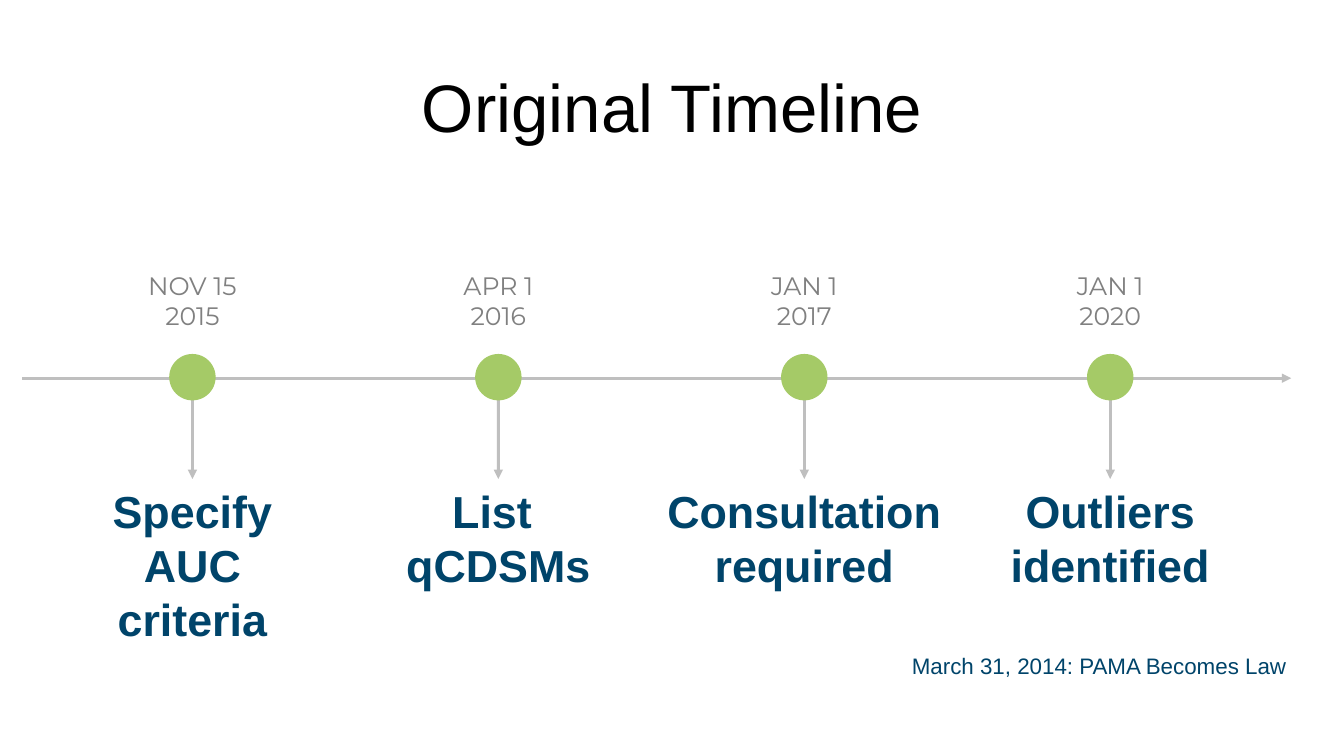
from dataclasses import dataclass

from lxml.etree import SubElement
from pptx import Presentation
from pptx.dml.color import RGBColor
from pptx.enum.shapes import MSO_CONNECTOR as Connector, MSO_SHAPE as Preset
from pptx.enum.text import MSO_ANCHOR as Anchor, MSO_AUTO_SIZE as AutoSize, PP_ALIGN as Align
from pptx.oxml.ns import qn
from pptx.shapes.autoshape import Shape
from pptx.shapes.connector import Connector as Line
from pptx.slide import Slide
from pptx.util import Cm, Pt


@dataclass(frozen=True)
class Theme:
    black: RGBColor = RGBColor(0x00, 0x00, 0x00)
    navy: RGBColor = RGBColor(0x00, 0x44, 0x6A)
    gray: RGBColor = RGBColor(0x80, 0x80, 0x80)
    silver: RGBColor = RGBColor(0xBF, 0xBF, 0xBF)
    green: RGBColor = RGBColor(0xA5, 0xCA, 0x67)
    body_font: str = "Arial"
    date_font: str = "Montserrat"
    title_size: int = 48
    step_size: int = 32
    date_size: int = 18
    note_size: int = 16
    line_width: float = 2.25


@dataclass(frozen=True)
class Milestone:
    date: str
    date_width: float
    step: str
    step_width: float


THEME = Theme()
MILESTONES = (
    Milestone("NOV 15\n2015", 3.12, "Specify\nAUC\ncriteria", 4.57),
    Milestone("APR 1\n2016", 2.6, "List \nqCDSMs", 5.2),
    Milestone("JAN 1\n2017", 2.6, "Consultation\nrequired", 7.47),
    Milestone("JAN 1\n2020", 2.6, "Outliers\nidentified", 5.56),
)

# Timeline geometry in centimetres
FIRST_X, SPACING = 4.85, 7.71
AXIS_Y, AXIS_START, AXIS_END = 9.53, 0.56, 32.54
DOT_SIZE, DOT_TOP = 1.17, 8.92
DATE_TOP, DATE_HEIGHT = 6.68, 1.8
ARROW_TOP, STEP_TOP = 9.8, 12.07
STEP_LINE, STEP_PADDING = 1.37, 0.25


def add_text(slide: Slide, text: str, left: float, top: float, width: float,
             height: float, *, size: int, color: RGBColor,
             font: str = THEME.body_font, bold: bool = False,
             align: Align = Align.CENTER, anchor: Anchor = Anchor.TOP,
             wrap: bool = False, grow: bool = True) -> Shape:
    box = slide.shapes.add_textbox(Cm(left), Cm(top), Cm(width), Cm(height))
    frame = box.text_frame
    frame.text = text
    frame.word_wrap = wrap
    frame.vertical_anchor = anchor
    frame.auto_size = AutoSize.SHAPE_TO_FIT_TEXT if grow else AutoSize.NONE
    for paragraph in frame.paragraphs:
        paragraph.alignment = align
        for run in paragraph.runs:
            run.font.name = font
            run.font.size = Pt(size)
            run.font.bold = bold
            run.font.color.rgb = color
    return box


def add_arrow(slide: Slide, x1: float, y1: float, x2: float, y2: float) -> Line:
    arrow = slide.shapes.add_connector(
        Connector.STRAIGHT, Cm(x1), Cm(y1), Cm(x2), Cm(y2))
    arrow.line.color.rgb = THEME.silver
    arrow.line.width = Pt(THEME.line_width)
    SubElement(arrow.line._get_or_add_ln(), qn("a:tailEnd"), type="triangle")
    SubElement(arrow._element.spPr, qn("a:effectLst"))
    return arrow


def add_step(slide: Slide, milestone: Milestone, center: float) -> None:
    line_count = len(milestone.step.splitlines())
    step = add_text(slide, milestone.step, center - milestone.step_width / 2,
                    STEP_TOP, milestone.step_width,
                    STEP_PADDING + STEP_LINE * line_count,
                    size=THEME.step_size, color=THEME.navy, bold=True)
    arrow = add_arrow(slide, center, ARROW_TOP, center, STEP_TOP)
    arrow.end_connect(step, 0)


def add_dated_dot(slide: Slide, milestone: Milestone, center: float) -> None:
    dot = slide.shapes.add_shape(Preset.OVAL, Cm(center - DOT_SIZE / 2),
                                 Cm(DOT_TOP), Cm(DOT_SIZE), Cm(DOT_SIZE))
    dot.shadow.inherit = False
    dot.fill.solid()
    dot.fill.fore_color.rgb = THEME.green
    dot.line.fill.background()
    add_text(slide, milestone.date, center - milestone.date_width / 2,
             DATE_TOP, milestone.date_width, DATE_HEIGHT,
             size=THEME.date_size, color=THEME.gray, font=THEME.date_font)


def main() -> None:
    deck = Presentation()
    deck.slide_width, deck.slide_height = Cm(33.87), Cm(19.05)
    slide = deck.slides.add_slide(deck.slide_layouts[6])

    # Title
    add_text(slide, "Original Timeline", 1.7, 1.07, 30.48, 3.18,
             size=THEME.title_size, color=THEME.black,
             anchor=Anchor.MIDDLE, wrap=True, grow=False)

    # Steps below the axis, then the axis, then the dated dots on top of it
    centers = [FIRST_X + SPACING * i for i in range(len(MILESTONES))]
    for milestone, center in zip(MILESTONES, centers):
        add_step(slide, milestone, center)
    add_arrow(slide, AXIS_START, AXIS_Y, AXIS_END, AXIS_Y)
    for milestone, center in zip(MILESTONES, centers):
        add_dated_dot(slide, milestone, center)

    # Footnote
    add_text(slide, "March 31, 2014: PAMA Becomes Law", 22.73, 16.31, 11.13, 0.94,
             size=THEME.note_size, color=THEME.navy, align=Align.LEFT, wrap=True)

    deck.save("out.pptx")


if __name__ == "__main__":
    main()
